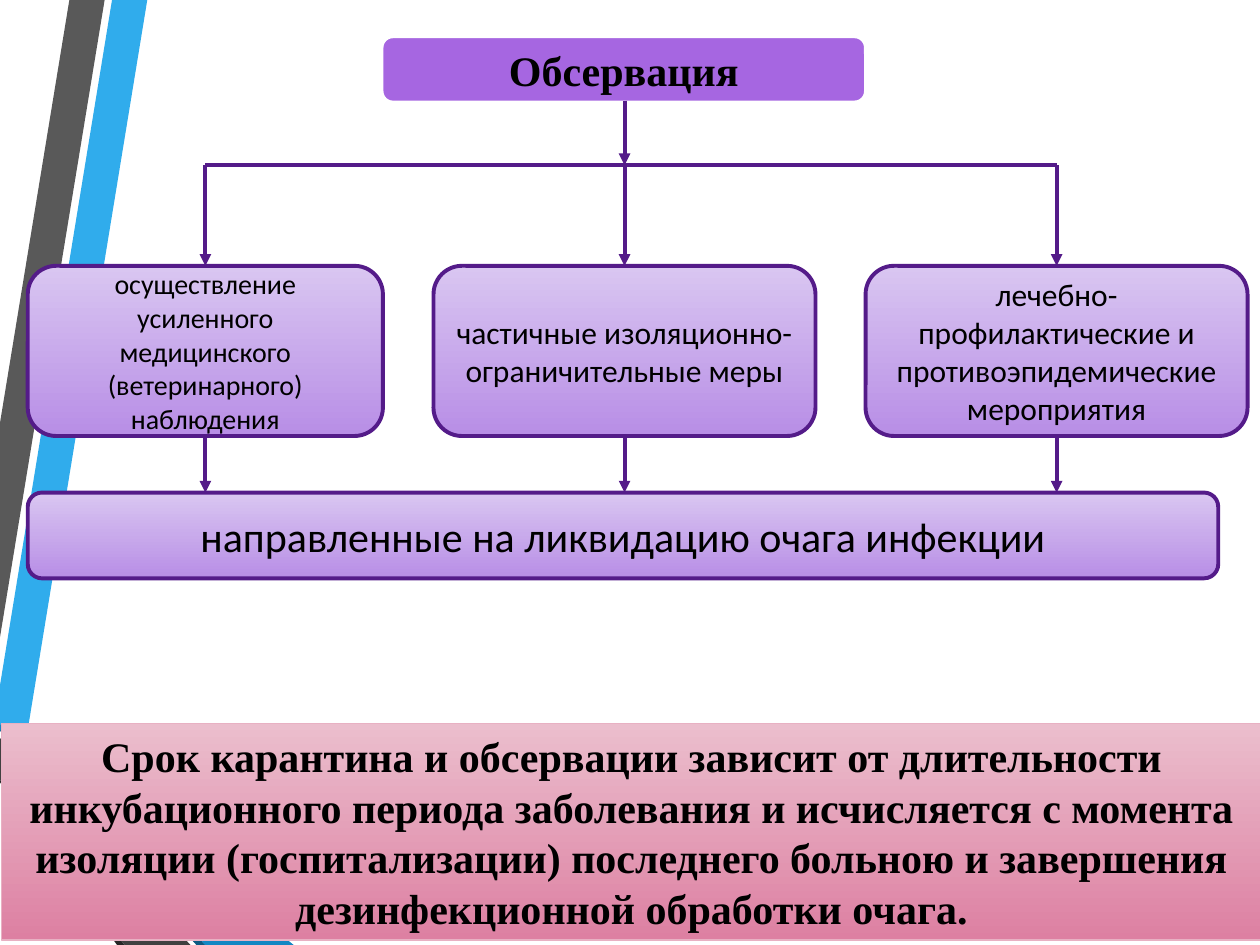
import pptx
import pptx.util
import pptx.dml.color
import pptx.enum.shapes
import pptx.enum.text
import pptx.oxml
import pptx.oxml.ns

Cm, Pt = pptx.util.Cm, pptx.util.Pt
RGB = pptx.dml.color.RGBColor.from_string
SHAPE = pptx.enum.shapes.MSO_SHAPE

COLORS = {
    "blue": "30ACEC", "gray": "595959", "black": "262626", "navy": "0C5A82",
    "azure": "1287C3", "charcoal": "404040", "text": "000000", "white": "FFFFFF",
    "title": "A666E1", "violet": "541B89", "lilac_top": "D9C6F1",
    "lilac_bottom": "B88EE6", "pink_top": "EBBECD", "pink_bottom": "DD80A2",
    "pink_line": "E8B1C3",
}
LILAC = ("lilac_top", "lilac_bottom")
PINK = ("pink_top", "pink_bottom")

prs = pptx.Presentation()
prs.slide_width, prs.slide_height = Cm(25.4), Cm(19.05)
s = prs.slides.add_slide(prs.slide_layouts[6])


def add_box(text, left, top, width, height, shape=SHAPE.ROUNDED_RECTANGLE, fill=LILAC,
            line="violet", weight=2.25, size=18, font="Calibri", bold=False):
    """Add a box with centred text; fill names one colour or a top and bottom pair."""
    sp = s.shapes.add_shape(shape, Cm(left), Cm(top), Cm(width), Cm(height))
    sp.shadow.inherit = False
    if isinstance(fill, tuple):
        sp.fill.gradient()
        sp.fill.gradient_angle = 270
        for stop, name in zip(sp.fill.gradient_stops, fill):
            stop.color.rgb = RGB(COLORS[name])
    else:
        sp.fill.solid()
        sp.fill.fore_color.rgb = RGB(COLORS[fill])
    sp.line.color.rgb = RGB(COLORS[line])
    sp.line.width = Pt(weight)
    tf = sp.text_frame
    tf.word_wrap = True
    tf.vertical_anchor = pptx.enum.text.MSO_ANCHOR.MIDDLE
    p = tf.paragraphs[0]
    p.alignment = pptx.enum.text.PP_ALIGN.CENTER
    r = p.add_run()
    r.text = text
    r.font.name, r.font.size, r.font.bold = font, Pt(size), bold
    r.font.color.rgb = RGB(COLORS["text"])


def add_line(x1, y1, x2, y2, arrow=True):
    c = s.shapes.add_connector(pptx.enum.shapes.MSO_CONNECTOR.STRAIGHT,
                               Cm(x1), Cm(y1), Cm(x2), Cm(y2))
    c.line.color.rgb = RGB(COLORS["violet"])
    c.line.width = Pt(2.25)
    if arrow:
        tail = pptx.oxml.ns.qn("a:tailEnd")
        c.line._get_or_add_ln().append(pptx.oxml.parse_xml(
            f'<a:tailEnd {pptx.oxml.ns.nsdecls("a")} type="triangle"/>'))
    c._element.spPr.append(pptx.oxml.parse_xml(
        f'<a:effectLst {pptx.oxml.ns.nsdecls("a")}/>'))


# Ribbons along the left edge
ribbons = [
    ("blue", [(0, 13.82), (0, 14.6), (0.56, 14.71), (2.97, 0), (2.26, 0)]),
    ("gray", [(2.11, 0), (1.4, 0), (0, 8.53), (0, 12.85)]),
    ("black", [(0, 15.72), (0, 15.77), (2.36, 19.05), (2.51, 19.05)]),
    ("navy", [(0, 14.71), (0, 14.73), (3.96, 19.05), (4.14, 19.05)]),
    ("azure", [(0, 14.71), (4.14, 19.05), (5.92, 19.05), (0.56, 14.71), (0, 14.6)]),
    ("charcoal", [(0, 15.72), (2.51, 19.05), (3.84, 19.05), (0, 14.88)]),
]
for color, points in ribbons:
    points = [(Cm(x), Cm(y)) for x, y in points]
    builder = s.shapes.build_freeform(*points[0])
    builder.add_line_segments(points[1:], close=True)
    sp = builder.convert_to_shape()
    sp.shadow.inherit = False
    sp.fill.solid()
    sp.fill.fore_color.rgb = RGB(COLORS[color])
    sp.line.fill.background()

# Conclusion and title
add_box("Срок карантина и обсервации зависит от длительности инкубационного периода "
        "заболевания и исчисляется с момента изоляции (госпитализации) последнего больною "
        "и завершения дезинфекционной обработки очага.",
        0.03, 14.58, 25.4, 4.37, shape=SHAPE.RECTANGLE, fill=PINK, line="pink_line",
        weight=0.75, size=24, font="Times New Roman", bold=True)
add_box("Обсервация", 7.7, 0.74, 9.75, 1.32, fill="title", line="white", weight=1.75,
        size=24, font="Times New Roman", bold=True)

# Measures and the goal they share
title_bottom, bar_y, box_top, box_height, goal_top = 2.03, 3.33, 5.36, 3.43, 9.93
measures = [
    ("осуществление усиленного медицинского (ветеринарного) наблюдения", 0.56, 7.16, 16),
    ("частичные изоляционно-ограничительные меры", 8.74, 7.7, 18),
    ("лечебно-профилактические и противоэпидемические мероприятия", 17.45, 7.7, 18),
]
centers = [left + width / 2 for _, left, width, _ in measures]
add_box("направленные на ликвидацию очага инфекции", 0.56, goal_top, 24, 1.73, size=24)
add_line(centers[0], bar_y, centers[-1], bar_y, arrow=False)
add_line(centers[1], title_bottom, centers[1], bar_y)
for (text, left, width, size), x in zip(measures, centers):
    add_line(x, bar_y, x, box_top)
    add_box(text, left, box_top, width, box_height, size=size)
    add_line(x, box_top + box_height, x, goal_top)

prs.save("out.pptx")
